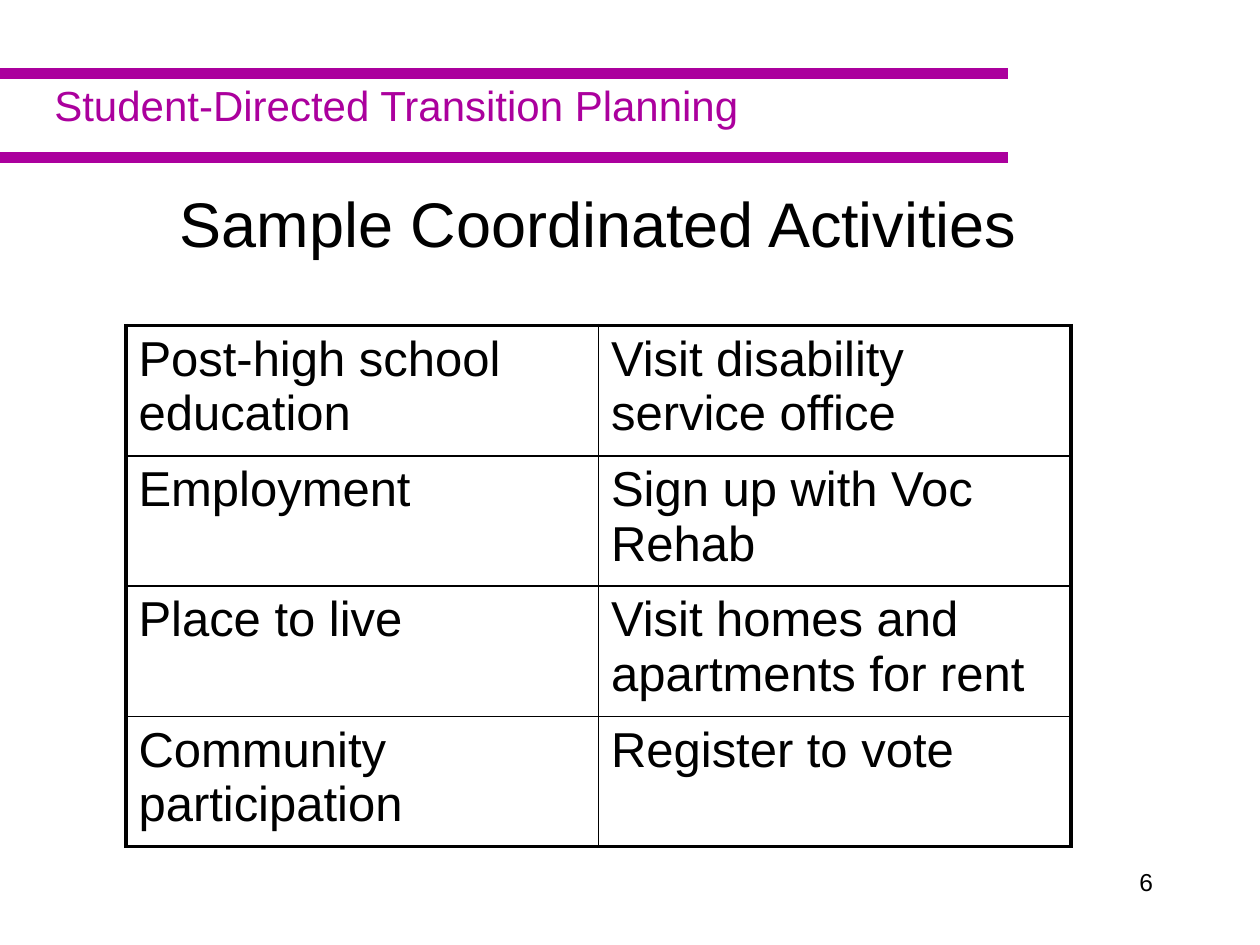
"""Build the slide of sample coordinated activities."""
from dataclasses import dataclass

import pptx
import pptx.dml.color
import pptx.enum.shapes
import pptx.enum.text
import pptx.oxml
import pptx.oxml.ns
import pptx.util

SCALE = 9525
FONT = "Arial"
COLORS = {"accent": "AB009D", "ink": "000000"}
ALIGN = pptx.enum.text.PP_ALIGN
THIN, THICK = 1, 2.25


@dataclass
class Rule:
    y: int
    width: int


@dataclass
class Label:
    text: str
    left: int
    top: int
    width: int
    height: int
    size: int
    color: str = "ink"
    align: ALIGN = ALIGN.LEFT
    wrap: bool = True


RULES = [Rule(56, 768), Rule(120, 768)]
LABELS = [
    Label("Student-Directed Transition Planning", 32, 56, 542, 48, 24, "accent", wrap=False),
    Label("6", 688, 656, 200, 48, 14, align=ALIGN.RIGHT),
    Label("Sample Coordinated Activities", 48, 136, 816, 120, 36, align=ALIGN.CENTER),
]
ROWS = [
    ("Post-high school education", "Visit disability service office"),
    ("Employment", "Sign up with Voc Rehab"),
    ("Place to live", "Visit homes and apartments for rent"),
    ("Community participation", "Register to vote"),
]


def px(count: int) -> pptx.util.Emu:
    """Turn px into EMU."""
    return pptx.util.Emu(count * SCALE)


def tint(name: str) -> pptx.dml.color.RGBColor:
    """Look up a named colour."""
    return pptx.dml.color.RGBColor.from_string(COLORS[name])


def style(para, size: int, color: str) -> None:
    """Format every run of a paragraph."""
    for run in para.runs:
        run.font.name = FONT
        run.font.size = pptx.util.Pt(size)
        run.font.color.rgb = tint(color)


def draw_rule(slide, rule: Rule) -> None:
    """Draw a heavy line from the left edge."""
    line = slide.shapes.add_connector(
        pptx.enum.shapes.MSO_CONNECTOR.STRAIGHT,
        px(0), px(rule.y), px(rule.width), px(rule.y))
    line.line.color.rgb = tint("accent")
    line.line.width = pptx.util.Pt(6)
    props = line._element.spPr
    props.append(props.makeelement(pptx.oxml.ns.qn("a:effectLst"), {}))


def draw_label(slide, label: Label) -> None:
    """Draw one line of text in a box."""
    box = slide.shapes.add_textbox(
        px(label.left), px(label.top), px(label.width), px(label.height))
    frame = box.text_frame
    frame.word_wrap = label.wrap
    frame.text = label.text
    para = frame.paragraphs[0]
    para.alignment = label.align
    style(para, label.size, label.color)


def edge(cell, side: str, width: float) -> None:
    """Add a solid border to one side of a cell."""
    ns = pptx.oxml.ns.nsdecls("a")
    cell._tc.get_or_add_tcPr().append(pptx.oxml.parse_xml(
        f'<a:{side} {ns} w="{pptx.util.Pt(width)}"><a:solidFill>'
        f'<a:srgbClr val="{COLORS["ink"]}"/></a:solidFill></a:{side}>'))


def draw_table(slide, rows: list[tuple[str, str]]) -> None:
    """Draw the grid with a thick frame and thin inner lines."""
    high, wide = len(rows), len(rows[0])
    table = slide.shapes.add_table(
        high, wide, px(96), px(248), px(720), px(99 * high)).table
    table.first_row = table.horz_banding = False
    for i, row in enumerate(rows):
        for j, text in enumerate(row):
            cell = table.cell(i, j)
            cell.text_frame.text = text
            style(cell.text_frame.paragraphs[0], 28, "ink")
            outer = {"lnL": j == 0, "lnR": j == wide - 1,
                     "lnT": i == 0, "lnB": i == high - 1}
            for side, thick in outer.items():
                edge(cell, side, THICK if thick else THIN)
            cell.fill.background()


def main() -> None:
    """Build and save the slide."""
    deck = pptx.Presentation()
    deck.slide_width, deck.slide_height = px(960), px(720)
    slide = deck.slides.add_slide(deck.slide_layouts[6])
    for rule in RULES:
        draw_rule(slide, rule)
    for label in LABELS:
        draw_label(slide, label)
    draw_table(slide, ROWS)
    deck.save("out.pptx")


if __name__ == "__main__":
    main()
